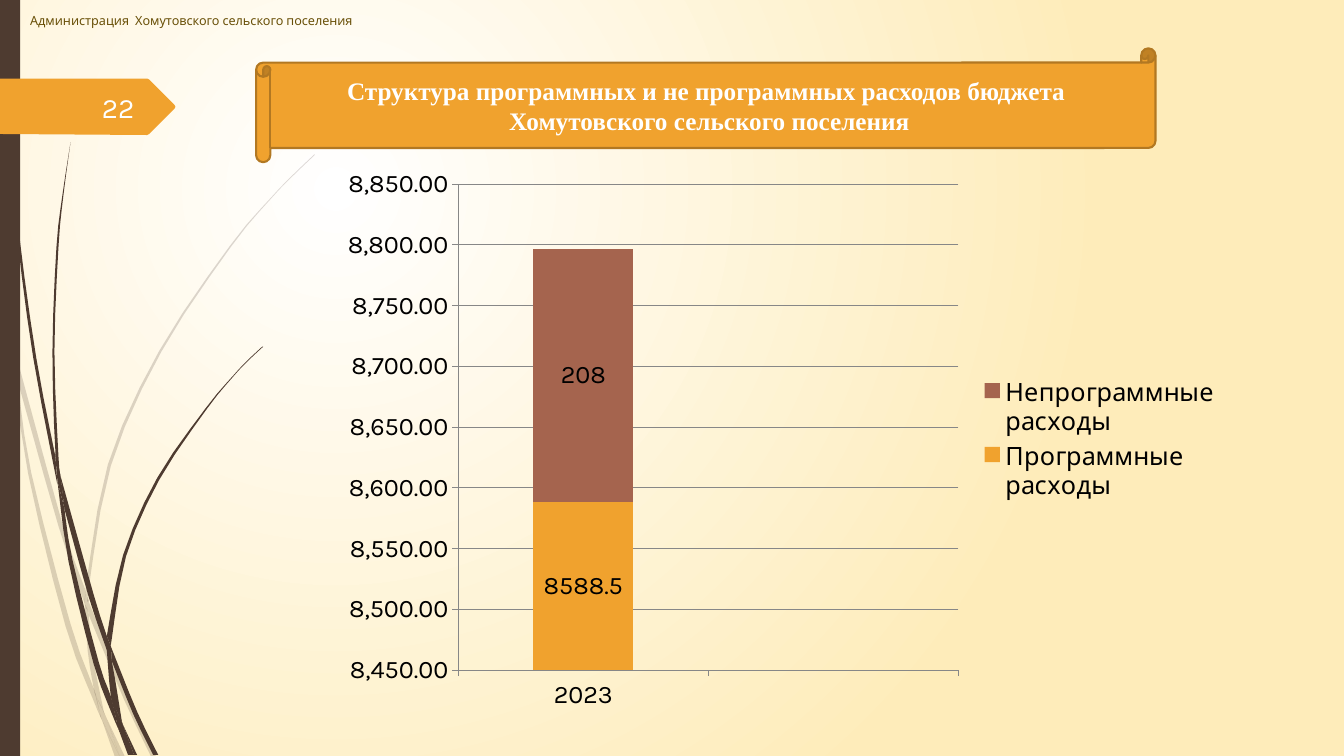
import lxml.etree
import pptx
import pptx.chart.data
import pptx.dml.color
import pptx.enum.chart
import pptx.enum.shapes
import pptx.enum.text
import pptx.oxml
import pptx.oxml.ns
import pptx.util
from pptx.util import Inches

BROWN, AMBER, RUST, GREY = "4E3B30", "F0A22E", "A5644E", "878787"
BODY_FONT, TITLE_FONT = "Karla", "Times New Roman"
CURVE_STEPS = 3

# Each blade of grass has two edges, given by the points they pass through, in inches
PALE_BLADES = [
    ([(0, 2.82), (0.09, 3.22), (0.11, 3.5)], [(0.11, 3.5), (0.1, 3.44), (0, 2.99)]),
    ([(0.14, 3.45), (0.62, 5.2), (0.85, 5.86)],
     [(0.84, 5.99), (0.58, 5.22), (0.17, 3.76)]),
    ([(0.88, 5.96), (0.92, 6.07), (1.27, 6.92), (1.55, 7.51)],
     [(1.5, 7.51), (1.23, 6.94), (0.88, 6.1)]),
    ([(1.05, 7.11), (1.24, 7.51)], [(1.19, 7.51), (1.05, 7.11)]),
    ([(0.11, 3.5), (0.28, 4.7), (0.65, 6.21), (0.92, 6.93), (1.01, 7.14)],
     [(0.99, 7.07), (0.93, 6.83), (0.7, 6.19), (0.31, 4.69), (0.17, 3.76), (0.11, 3.5)]),
    ([(0.84, 5.99), (0.87, 6.46), (0.93, 6.83), (0.96, 6.92), (1.05, 7.11)],
     [(1.03, 7.06), (0.91, 6.46), (0.88, 6.1), (0.84, 5.99)]),
    ([(0.88, 5.96), (0.88, 5.84), (1.1, 4.62), (1.6, 3.49), (2.29, 2.45), (2.68, 1.98),
      (2.9, 1.75), (3.12, 1.54)],
     [(3.12, 1.53), (2.89, 1.75), (2.68, 1.97), (2.28, 2.44), (1.58, 3.48), (1.07, 4.61),
      (0.85, 5.84)]),
    ([(1.01, 7.14), (1.14, 7.51)], [(1.19, 7.51), (1.01, 7.14)]),
    ([(0.85, 5.86), (0.84, 5.99), (0.88, 6.08)], [(0.88, 6.1), (0.88, 5.96)]),
    ([(0.93, 6.83), (0.99, 7.07), (1.01, 7.14), (1.19, 7.51)],
     [(1.19, 7.51), (1.05, 7.11), (0.96, 6.92)]),
]
DARK_BLADES = [
    ([(0.03, 0), (0.04, 0.48), (0.07, 1.1), (0.17, 2.33), (0.33, 3.55), (0.57, 4.81)],
     [(0.55, 4.53), (0.36, 3.55), (0.19, 2.32), (0.08, 1.09), (0.05, 0.48), (0.04, 0)]),
    ([(0.6, 4.72), (0.93, 5.9), (1.06, 6.31)], [(1.06, 6.45), (0.88, 5.92), (0.64, 5.05)]),
    ([(1.1, 6.41), (1.13, 6.49), (1.36, 7.06), (1.57, 7.49)],
     [(1.52, 7.49), (1.32, 7.08), (1.11, 6.56)]),
    ([(0.57, 4.77), (0.68, 5.57), (0.93, 6.59), (1.11, 7.08), (1.17, 7.22)],
     [(1.16, 7.17), (1.1, 6.91), (0.98, 6.57), (0.72, 5.56), (0.64, 5.05)]),
    ([(0.6, 4.72), (0.58, 4.53), (0.54, 3.49), (0.58, 2.45), (0.63, 1.93), (0.7, 1.41)],
     [(0.7, 1.41), (0.62, 1.93), (0.56, 2.45), (0.52, 3.49), (0.55, 4.49), (0.6, 4.72)]),
    ([(1.22, 7.19), (1.36, 7.49)], [(1.33, 7.49), (1.22, 7.19)]),
    ([(0.55, 4.49), (0.6, 4.72), (0.64, 5.05)], [(0.57, 4.77), (0.55, 4.53)]),
    ([(1.1, 6.41), (1.11, 6.33), (1.25, 5.52), (1.58, 4.76), (2.05, 4.06), (2.31, 3.74),
      (2.45, 3.59), (2.61, 3.44)],
     [(2.6, 3.44), (2.45, 3.58), (2.31, 3.73), (2.04, 4.05), (1.56, 4.74), (1.22, 5.51),
      (1.06, 6.31)]),
    ([(1.17, 7.22), (1.27, 7.49)], [(1.31, 7.49), (1.17, 7.22)]),
    ([(1.06, 6.45), (1.1, 6.91), (1.16, 7.06), (1.22, 7.19)],
     [(1.21, 7.16), (1.11, 6.56), (1.06, 6.45)]),
    ([(1.06, 6.31), (1.06, 6.45), (1.11, 6.56)], [(1.1, 6.41), (1.06, 6.31)]),
    ([(1.1, 6.91), (1.16, 7.17), (1.17, 7.22), (1.3, 7.49)],
     [(1.33, 7.49), (1.22, 7.19), (1.16, 7.06)]),
]
PAGE_ARROW = [(0, 0.78), (1.46, 0.78), (1.48, 0.79), (1.73, 1.04), (1.74, 1.06),
              (1.73, 1.08), (1.48, 1.33), (1.46, 1.34), (0, 1.33)]


def color(hex_text):
    return pptx.dml.color.RGBColor.from_string(hex_text)


def paint(shape, fill, line=None, width=1.5, opacity=100):
    shape.shadow.inherit = False
    shape.fill.solid()
    shape.fill.fore_color.rgb = color(fill)
    if opacity < 100:
        tint = shape.fill._xPr.find(".//" + pptx.oxml.ns.qn("a:srgbClr"))
        alpha = lxml.etree.SubElement(tint, pptx.oxml.ns.qn("a:alpha"))
        alpha.set("val", str(opacity * 1000))
    if line:
        shape.line.color.rgb = color(line)
        shape.line.width = pptx.util.Pt(width)
    else:
        shape.line.fill.background()


def smooth(edge):
    """Return points of a Catmull-Rom curve through the edge."""
    if len(edge) == 2:
        return edge
    padded = [edge[0], *edge, edge[-1]]
    curve = [edge[0]]
    for a, b, c, d in zip(padded, padded[1:], padded[2:], padded[3:]):
        for step in range(1, CURVE_STEPS + 1):
            t = step / CURVE_STEPS
            curve.append(tuple(
                0.5 * (2 * q + (r - p) * t + (2 * p - 5 * q + 4 * r - s) * t ** 2
                       + (3 * q - p - 3 * r + s) * t ** 3)
                for p, q, r, s in zip(a, b, c, d)))
    return curve


def add_outline(shapes, points, fill, opacity=100):
    corners = [(Inches(x), Inches(y)) for x, y in points]
    builder = shapes.build_freeform(*corners[0])
    builder.add_line_segments(corners[1:], close=True)
    paint(builder.convert_to_shape(), fill, opacity=opacity)


def add_grass(page, blades, opacity):
    group = page.shapes.add_group_shape()
    for near_edge, far_edge in blades:
        add_outline(group.shapes, smooth(near_edge) + smooth(far_edge), BROWN, opacity)


def write(box, lines, size, font, hex_text, align, bold=False):
    frame = box.text_frame
    frame.word_wrap = True
    frame.vertical_anchor = pptx.enum.text.MSO_ANCHOR.MIDDLE
    for index, line in enumerate(lines):
        para = frame.paragraphs[0] if index == 0 else frame.add_paragraph()
        para.alignment = align
        span = para.add_run()
        span.text = line
        span.font.size = pptx.util.Pt(size)
        span.font.name = font
        span.font.bold = bold
        span.font.color.rgb = color(hex_text)


def add_label(page, place, text, size, hex_text, align):
    box = page.shapes.add_textbox(*map(Inches, place))
    write(box, [text], size, BODY_FONT, hex_text, align)


def add_preset(page, kind, place, fill, line=None):
    shape = page.shapes.add_shape(kind, *map(Inches, place))
    paint(shape, fill, line)
    return shape


def set_background(page):
    fill = page.background.fill
    fill.gradient()
    for stop, hex_text in zip(fill.gradient_stops, ("FFFFFF", "FEECBA")):
        stop.color.rgb = color(hex_text)
    linear = page.background._cSld.find(".//" + pptx.oxml.ns.qn("a:lin"))
    circle = pptx.oxml.parse_xml(
        '<a:path xmlns:a="http://schemas.openxmlformats.org/drawingml/2006/main" path="circle">'
        '<a:fillToRect l="50000" t="50000" r="100000" b="100000"/></a:path>')
    linear.getparent().replace(linear, circle)


def add_spending_chart(page, place):
    data = pptx.chart.data.CategoryChartData()
    data.categories = ["2023", ""]
    data.add_series("Программные расходы", [8588.5, None])
    data.add_series("Непрограммные расходы", [208, None])
    chart = page.shapes.add_chart(pptx.enum.chart.XL_CHART_TYPE.COLUMN_STACKED,
                                  *map(Inches, place), data).chart
    chart.has_title = False
    chart.font.size = pptx.util.Pt(18)
    chart.font.name = BODY_FONT
    chart.font.color.rgb = color("000000")
    chart.has_legend = True
    chart.legend.position = pptx.enum.chart.XL_LEGEND_POSITION.RIGHT
    chart.legend.include_in_layout = False

    # Columns and their values
    plot = chart.plots[0]
    plot.vary_by_categories = False
    plot.gap_width, plot.overlap = 150, 100
    for series, hex_text in zip(plot.series, (AMBER, RUST)):
        series.format.fill.solid()
        series.format.fill.fore_color.rgb = color(hex_text)
        series.data_labels.show_value = True

    # Axes
    amounts = chart.value_axis
    amounts.minimum_scale, amounts.maximum_scale, amounts.major_unit = 8450, 8850, 50
    amounts.tick_labels.number_format = "#,##0.00"
    amounts.tick_labels.number_format_is_linked = False
    amounts.has_major_gridlines = True
    for part in (amounts, amounts.major_gridlines, chart.category_axis):
        part.format.line.color.rgb = color(GREY)
        part.format.line.width = pptx.util.Pt(0.75)


def main():
    deck = pptx.Presentation()
    deck.slide_width, deck.slide_height = Inches(13.33), Inches(7.5)
    page = deck.slides.add_slide(deck.slide_layouts[6])
    align = pptx.enum.text.PP_ALIGN
    kinds = pptx.enum.shapes.MSO_SHAPE

    # Backdrop
    set_background(page)
    add_grass(page, PALE_BLADES, 20)
    add_grass(page, DARK_BLADES, 100)
    add_preset(page, kinds.RECTANGLE, (0, 0, 0.2, 7.5), BROWN)
    add_outline(page.shapes, PAGE_ARROW, AMBER)

    # Header, page number and title
    add_label(page, (0.2, 0, 8.33, 0.4), "Администрация  Хомутовского сельского поселения",
              9, "695008", align.LEFT)
    add_label(page, (0.58, 0.86, 0.85, 0.4), "22", 20, "FEFFFF", align.RIGHT)
    scroll = add_preset(page, kinds.HORIZONTAL_SCROLL, (2.54, 0.48, 8.92, 1.13), AMBER, "B27822")
    write(scroll, ["Структура программных и не программных расходов бюджета ",
                   "Хомутовского сельского поселения"],
          18, TITLE_FONT, "FFFFFF", align.CENTER, bold=True)

    add_spending_chart(page, (3.27, 1.57, 8.94, 5.58))
    deck.save("out.pptx")


if __name__ == "__main__":
    main()
